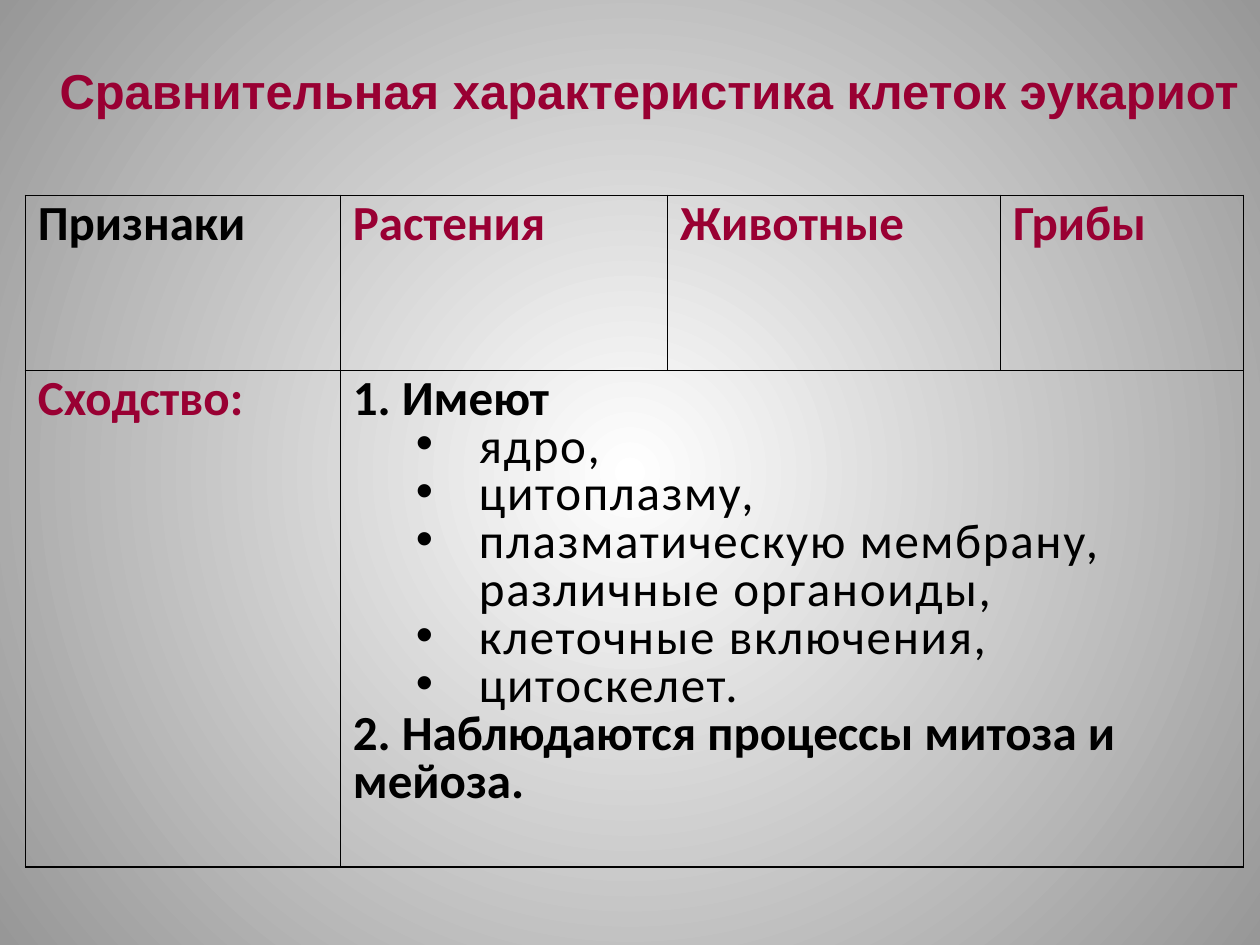
from dataclasses import dataclass

from lxml.etree import SubElement
from pptx import Presentation
from pptx.dml.color import RGBColor
from pptx.enum.text import MSO_ANCHOR, PP_ALIGN
from pptx.oxml import parse_xml
from pptx.oxml.ns import nsdecls, qn
from pptx.util import Cm, Pt


@dataclass(frozen=True)
class Theme:
    """Colours, fonts and type sizes of the slide."""
    accent: RGBColor = RGBColor(0x99, 0x00, 0x33)
    text: RGBColor = RGBColor(0, 0, 0)
    glow: RGBColor = RGBColor(0xFF, 0xFF, 0xFF)
    edge: RGBColor = RGBColor(0x97, 0x97, 0x97)
    title_font: str = "Arial"
    body_font: str = "Calibri"
    size: Pt = Pt(28)
    border: Pt = Pt(1)


THEME = Theme()
COLUMNS = (6.35, 6.6, 6.71, 4.9)
ROWS = (3.53, 10.01)
HEADERS = ("Признаки", "Растения", "Животные", "Грибы")
ORGANELLES = (
    "ядро,",
    "цитоплазму,",
    "плазматическую мембрану, различные органоиды,",
    "клеточные включения,",
    "цитоскелет.",
)


def set_background(slide):
    """Fill the slide with a circular gradient."""
    fill = slide.background.fill
    fill.gradient()
    for stop, color, position in zip(fill.gradient_stops, (THEME.glow, THEME.edge), (0, 1)):
        stop.color.rgb = color
        stop.position = position
    grad = slide.element.find(f".//{qn('a:gradFill')}")
    grad.replace(grad.find(qn("a:lin")), parse_xml(
        f'<a:path {nsdecls("a")} path="circle">'
        '<a:fillToRect l="50000" t="50000" r="50000" b="50000"/></a:path>'))


def format_text(p, color, font=THEME.body_font, bold=True):
    """Format every run of a paragraph."""
    for r in p.runs:
        r.font.name = font
        r.font.size = THEME.size
        r.font.bold = bold
        r.font.color.rgb = color


def add_title(slide, text):
    """Add the centred heading on one line."""
    sp = slide.shapes.add_textbox(Cm(0.79), Cm(1.09), Cm(24.59), Cm(1.45))
    tf = sp.text_frame
    tf.word_wrap = False
    tf.vertical_anchor = MSO_ANCHOR.MIDDLE
    tf.text = text
    p = tf.paragraphs[0]
    p.alignment = PP_ALIGN.CENTER
    format_text(p, THEME.accent, THEME.title_font)


def style_cell(cell):
    """Clear the fill and draw all four borders."""
    cell.fill.background()
    tc_pr = cell._tc.get_or_add_tcPr()
    for i, side in enumerate("LRTB"):
        tc_pr.insert(i, parse_xml(
            f'<a:ln{side} {nsdecls("a")} w="{THEME.border}"><a:solidFill>'
            f'<a:srgbClr val="{THEME.text}"/></a:solidFill></a:ln{side}>'))


def make_bullet(p):
    """Turn a paragraph into an indented, letter-spaced bullet."""
    p.level = 1
    p_pr = p._p.get_or_add_pPr()
    p_pr.set("marL", str(Cm(2.54)))
    p_pr.set("indent", str(Cm(-1.27)))
    SubElement(p_pr, qn("a:buFont")).set("typeface", THEME.title_font)
    SubElement(p_pr, qn("a:buChar")).set("char", "•")
    for r in p.runs:
        r.font._element.set("spc", str(100))


def write_cell(cell, lines, color, bullets=()):
    """Write one paragraph per line, with bullets where listed."""
    tf = cell.text_frame
    tf.text = "\n".join(lines)
    for p in tf.paragraphs:
        bulleted = p.text in bullets
        p.line_spacing = 0.8
        format_text(p, color, bold=not bulleted)
        if bulleted:
            make_bullet(p)


def add_comparison(slide):
    """Add the table comparing the cells."""
    table = slide.shapes.add_table(
        len(ROWS), len(COLUMNS), Cm(0.51), Cm(3.94), Cm(sum(COLUMNS)), Cm(sum(ROWS))).table
    table.first_row = table.horz_banding = False
    for column, width in zip(table.columns, COLUMNS):
        column.width = Cm(width)
    for row, height in zip(table.rows, ROWS):
        row.height = Cm(height)
    for cell in table.iter_cells():
        style_cell(cell)
    table.cell(1, 1).merge(table.cell(1, 3))
    for i, header in enumerate(HEADERS):
        write_cell(table.cell(0, i), [header], THEME.accent if i else THEME.text)
    write_cell(table.cell(1, 0), ["Сходство:"], THEME.accent)
    lines = ["1. Имеют", *ORGANELLES, "2. Наблюдаются процессы митоза и мейоза."]
    write_cell(table.cell(1, 1), lines, THEME.text, ORGANELLES)


def main():
    """Build and save the slide."""
    prs = Presentation()
    prs.slide_width, prs.slide_height = Cm(25.4), Cm(19.05)
    slide = prs.slides.add_slide(prs.slide_layouts[6])
    set_background(slide)
    add_title(slide, "Сравнительная характеристика клеток эукариот")
    add_comparison(slide)
    prs.save("out.pptx")


if __name__ == "__main__":
    main()
